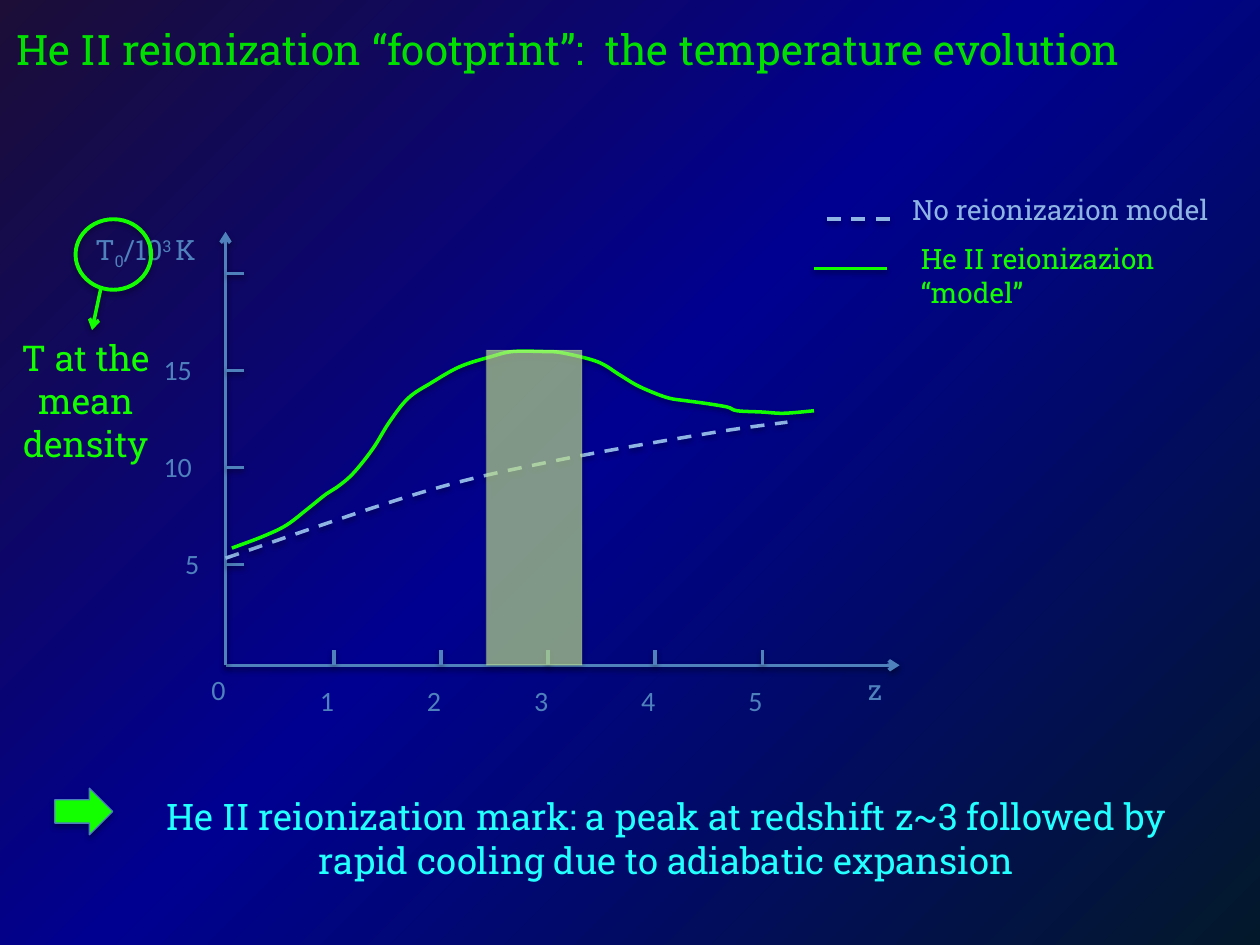
from lxml import etree
from pptx import Presentation
from pptx.dml.color import RGBColor
from pptx.enum.dml import MSO_LINE
from pptx.enum.shapes import MSO_CONNECTOR, MSO_SHAPE
from pptx.enum.text import PP_ALIGN
from pptx.oxml import parse_xml
from pptx.oxml.ns import nsdecls, qn
from pptx.util import Inches, Pt

COLORS = {
    "title": "00DF00", "axis": "4F81BD", "plain": "8EB4E3", "model": "13FF00",
    "band": "D2F89A", "mark": "24FFFF", "arrow_edge": "4B7EBC",
}
SERIF, SANS = "Roboto Slab", "Calibri"

prs = Presentation()
prs.slide_width, prs.slide_height = Inches(10), Inches(7.5)
slide = prs.slides.add_slide(prs.slide_layouts[6])
shapes = slide.shapes

stops = "".join(
    f'<a:gs pos="{pos * 1000}"><a:srgbClr val="{color}"/></a:gs>'
    for pos, color in [(0, "1C0E37"), (47, "000090"), (100, "03192B")])
slide.element.cSld.insert(0, parse_xml(
    f'<p:bg {nsdecls("p", "a")}><p:bgPr><a:gradFill rotWithShape="1"><a:gsLst>{stops}</a:gsLst>'
    '<a:path path="circle"><a:fillToRect r="100000" b="100000"/></a:path></a:gradFill>'
    '<a:effectLst/></p:bgPr></p:bg>'))


def add_label(text, left, top, width, height, size, color, font=SERIF, centered=False):
    """Add a one-paragraph text box and return its paragraph."""
    box = shapes.add_textbox(Inches(left), Inches(top), Inches(width), Inches(height))
    box.text_frame.word_wrap = True
    paragraph = box.text_frame.paragraphs[0]
    paragraph.text = text
    if centered:
        paragraph.alignment = PP_ALIGN.CENTER
    run_font = paragraph.runs[0].font
    run_font.size, run_font.name = Pt(size), font
    run_font.color.rgb = RGBColor.from_string(COLORS[color])
    return paragraph


def add_line(x1, y1, x2, y2, color, arrow=False, dashed=False):
    connector = shapes.add_connector(
        MSO_CONNECTOR.STRAIGHT, Inches(x1), Inches(y1), Inches(x2), Inches(y2))
    connector.line.color.rgb = RGBColor.from_string(COLORS[color])
    connector.line.width = Pt(2)
    if dashed:
        connector.line.dash_style = MSO_LINE.DASH
    if arrow:
        etree.SubElement(connector.line._get_or_add_ln(), qn("a:tailEnd")).set("type", "arrow")


add_label("He II reionization “footprint”:  the temperature evolution",
          0.03, 0.14, 9.96, 0.5, 24, "title")

# Axes with ticks and numbers
ORIGIN_X, ORIGIN_Y = 1.79, 5.28
add_line(ORIGIN_X, ORIGIN_Y, 7.14, ORIGIN_Y, "axis", arrow=True)
add_line(ORIGIN_X, ORIGIN_Y, ORIGIN_X, 1.84, "axis", arrow=True)
add_label("z", 6.79, 5.29, 0.42, 0.37, 16, "axis")
add_label("0", 1.58, 5.29, 0.42, 0.37, 16, "axis", SANS)
for z in range(1, 6):
    x = 2.65 + 0.85 * (z - 1)
    add_line(x, 5.16, x, ORIGIN_Y, "axis")
    add_label(str(z), x - 0.21, 5.38, 0.42, 0.37, 16, "axis", SANS)
for step, (number, left, width) in enumerate(
        [("5", 1.37, 0.42), ("10", 1.2, 0.52), ("15", 1.2, 0.52), (None, 0, 0)]):
    y = 4.48 - 0.77 * step
    add_line(1.94, y, ORIGIN_X, y, "axis")
    if number:
        add_label(number, left, y - 0.19, width, 0.37, 16, "axis", SANS)

axis_title = add_label("T", 0.66, 1.8, 1.44, 0.37, 16, "axis")
for part, baseline in [("0", -25), ("/10", 0), ("3 ", 30), ("K", 0)]:
    run = axis_title.add_run()
    run.text = part
    run.font.size, run.font.name = Pt(16), SERIF
    run.font.color.rgb = RGBColor.from_string(COLORS["axis"])
    run._r.get_or_add_rPr().set("baseline", str(baseline * 1000))

# Temperature curves: one Bézier piece between neighbouring knots
no_reionization = [(1.79, 4.43), (3.34, 3.91), (4.39, 3.66), (5.62, 3.44), (6.25, 3.35)]
he_reionization = [
    (6.46, 3.26), (6.22, 3.28), (6.05, 3.27), (5.85, 3.26), (5.77, 3.23), (5.59, 3.2),
    (5.44, 3.18), (5.31, 3.16), (5.17, 3.11), (5.04, 3.05), (4.91, 2.97), (4.74, 2.87),
    (4.46, 2.8), (4.31, 2.79), (4.07, 2.79), (3.9, 2.83), (3.65, 2.91), (3.42, 3.04),
    (3.24, 3.16), (3.09, 3.35), (2.96, 3.56), (2.8, 3.76), (2.67, 3.87), (2.59, 3.92),
    (2.44, 4.04), (2.27, 4.17), (2.08, 4.26), (1.84, 4.35)]
for knots, color, dash in [(no_reionization, "plain", MSO_LINE.DASH),
                           (he_reionization, "model", None)]:
    padded = [knots[0], *knots, knots[-1]]
    bezier_points = []
    for before, start, end, after in zip(padded, padded[1:], padded[2:], padded[3:]):
        bezier_points += [
            tuple(Inches(s + (e - b) / 6) for b, s, e in zip(before, start, end)),
            tuple(Inches(e - (a - s) / 6) for s, e, a in zip(start, end, after)),
            tuple(Inches(e) for e in end)]
    first_x, first_y = knots[0]
    builder = shapes.build_freeform(Inches(first_x), Inches(first_y))
    builder.add_line_segments(bezier_points, close=False)
    curve = builder.convert_to_shape()
    segments = list(curve._element.iter(qn("a:lnTo")))
    for piece in zip(segments[::3], segments[1::3], segments[2::3]):
        cubic = etree.Element(qn("a:cubicBezTo"))
        piece[0].addprevious(cubic)
        for segment in piece:
            cubic.append(segment[0])
            segment.getparent().remove(segment)
    curve.fill.background()
    curve.line.color.rgb = RGBColor.from_string(COLORS[color])
    curve.line.width = Pt(2)
    if dash:
        curve.line.dash_style = dash

# Translucent band around the peak
band = shapes.add_shape(MSO_SHAPE.RECTANGLE, Inches(3.86), Inches(2.78), Inches(0.76), Inches(2.5))
band.fill.solid()
band.fill.fore_color.rgb = band.line.color.rgb = RGBColor.from_string(COLORS["band"])
band.line.width = Pt(0.75)
for color_node, alpha in zip(band._element.spPr.iter(qn("a:srgbClr")), (61, 15)):
    etree.SubElement(color_node, qn("a:alpha")).set("val", str(alpha * 1000))

# Callout on the axis title
ring = shapes.add_shape(MSO_SHAPE.OVAL, Inches(0.6), Inches(1.74), Inches(0.6), Inches(0.56))
ring.fill.background()
ring.line.color.rgb = RGBColor.from_string(COLORS["model"])
ring.line.width = Pt(2.25)
add_label("T at the mean density", 0, 2.62, 1.36, 0.91, 20.3, "model", centered=True)
add_line(0.8, 2.29, 0.73, 2.62, "model", arrow=True)

# Legend
add_line(6.56, 1.74, 7.14, 1.74, "plain", dashed=True)
add_label("No reionizazion model", 7.14, 1.48, 2.86, 0.37, 16, "plain")
add_line(6.46, 2.13, 7.04, 2.13, "model")
add_label("He II reionizazion “model”", 7.21, 1.87, 2.68, 0.64, 16, "model")

# Conclusion
add_label("He II reionization mark: a peak at redshift z~3 followed by rapid cooling "
          "due to adiabatic expansion", 1.16, 6.25, 8.26, 1.05, 20.9, "mark", centered=True)
pointer = shapes.add_shape(MSO_SHAPE.DOWN_ARROW, Inches(0.48), Inches(6.21), Inches(0.37), Inches(0.46))
pointer.rotation = 270
pointer.fill.solid()
pointer.fill.fore_color.rgb = RGBColor.from_string(COLORS["model"])
pointer.line.color.rgb = RGBColor.from_string(COLORS["arrow_edge"])
pointer.line.width = Pt(0.75)

prs.save("out.pptx")
